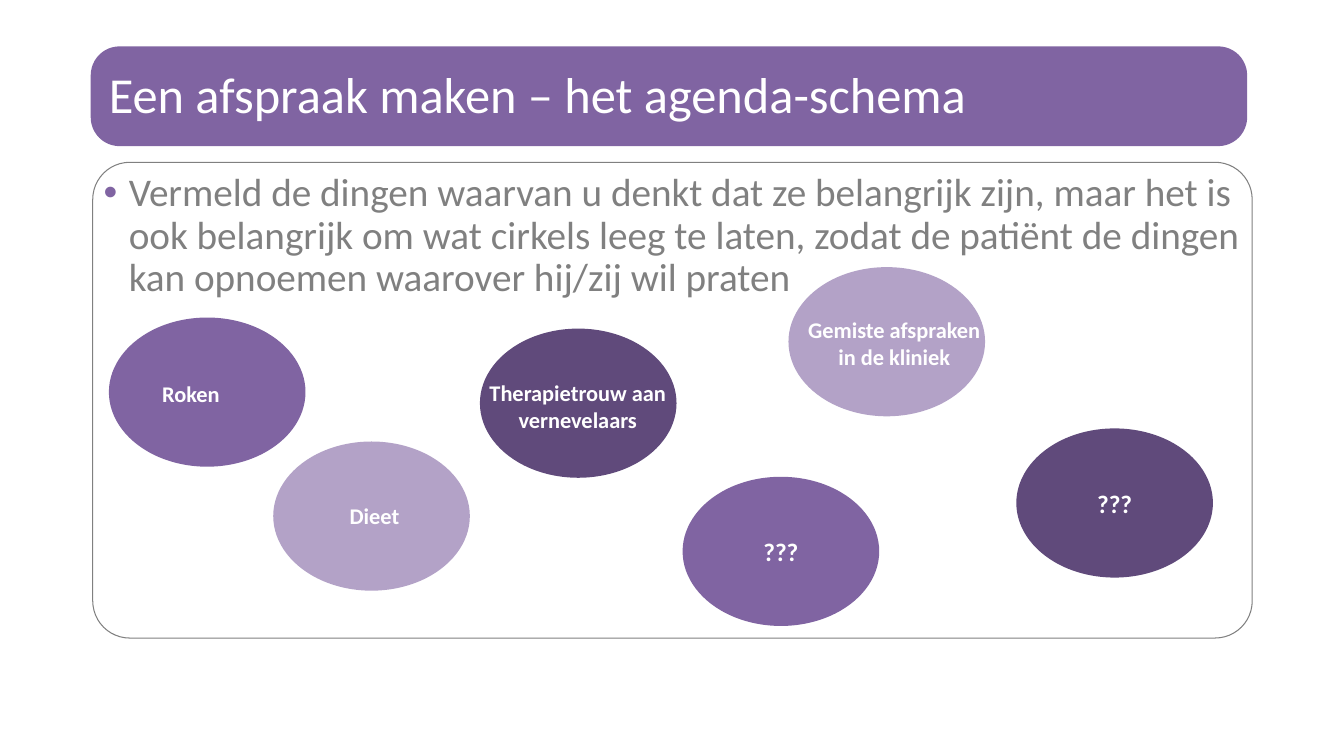
"""Build the agenda-setting slide with a title bar, a bullet panel and topic circles."""
from dataclasses import dataclass

from lxml import etree
from pptx import Presentation
from pptx.dml.color import RGBColor
from pptx.enum.shapes import MSO_SHAPE
from pptx.enum.text import MSO_ANCHOR, MSO_AUTO_SIZE, PP_ALIGN
from pptx.oxml.ns import qn
from pptx.util import Inches, Pt

ROUNDED = MSO_SHAPE.ROUNDED_RECTANGLE
OVAL = MSO_SHAPE.OVAL
TOP, MIDDLE = MSO_ANCHOR.TOP, MSO_ANCHOR.MIDDLE
LEFT, CENTER = PP_ALIGN.LEFT, PP_ALIGN.CENTER
GROW = MSO_AUTO_SIZE.SHAPE_TO_FIT_TEXT

FONT = "Calibri"
COLORS = {
    "purple": "8064A2",
    "lilac": "B3A2C7",
    "plum": "604A7B",
    "gray": "808080",
    "white": "FFFFFF",
}
CIRCLE_WIDTH, CIRCLE_HEIGHT = 1.95, 1.48
TITLE = "Een afspraak maken – het agenda-schema"
ADVICE = (
    "Vermeld de dingen waarvan u denkt dat ze belangrijk zijn, maar het is ook "
    "belangrijk om wat cirkels leeg te laten, zodat de patiënt de dingen kan "
    "opnoemen waarover hij/zij wil praten"
)


@dataclass(frozen=True)
class Box:
    left: float
    top: float
    width: float
    height: float

    def lengths(self) -> tuple:
        return tuple(Inches(v) for v in (self.left, self.top, self.width, self.height))


@dataclass(frozen=True)
class Topic:
    text: str
    color: str
    left: float
    top: float
    label: Box
    size: int = 16
    align: PP_ALIGN = CENTER
    anchor: MSO_ANCHOR = TOP
    wrap: bool = False


TOPICS = [
    Topic("Dieet", "lilac", 2.71, 4.38, Box(3.37, 4.93, 0.7, 0.37), align=LEFT),
    Topic("Roken", "purple", 1.08, 3.15, Box(1.51, 3.72, 0.78, 0.37), align=LEFT),
    Topic("Therapietrouw aan\nvernevelaars", "plum", 4.76, 3.26,
          Box(4.72, 3.71, 2.02, 0.64)),
    Topic("Gemiste afspraken\nin de kliniek", "lilac", 7.82, 2.65,
          Box(7.75, 3.09, 2.24, 0.64), wrap=True),
    Topic("???", "purple", 6.77, 4.73, Box(7.47, 5.27, 0.55, 0.4), 18, anchor=MIDDLE),
    Topic("???", "plum", 10.08, 4.25, Box(10.78, 4.79, 0.55, 0.4), 18, anchor=MIDDLE),
]


def rgb(name: str) -> RGBColor:
    return RGBColor.from_string(COLORS[name])


def add_solid(shapes, kind: MSO_SHAPE, box: Box, color: str):
    shape = shapes.add_shape(kind, *box.lengths())
    shape.shadow.inherit = False
    shape.fill.solid()
    shape.fill.fore_color.rgb = rgb(color)
    shape.line.fill.background()
    return shape


def write_text(text_frame, text: str, size: int, color: str, bold: bool = False,
               align: PP_ALIGN = LEFT, spacing: float = 1.0) -> None:
    text_frame.text = text
    for paragraph in text_frame.paragraphs:
        paragraph.alignment = align
        paragraph.line_spacing = spacing
        for run in paragraph.runs:
            run.font.name = FONT
            run.font.size = Pt(size)
            run.font.bold = bold
            run.font.color.rgb = rgb(color)


def clear_margins(text_frame) -> None:
    text_frame.margin_left = text_frame.margin_right = 0
    text_frame.margin_top = text_frame.margin_bottom = 0
    text_frame.word_wrap = True


def add_bullet(paragraph, color: str) -> None:
    properties = paragraph._p.get_or_add_pPr()
    properties.set("marL", str(Inches(0.25)))
    properties.set("indent", str(-Inches(0.25)))
    bullet_color = etree.SubElement(properties, qn("a:buClr"))
    etree.SubElement(bullet_color, qn("a:srgbClr"), val=COLORS[color])
    etree.SubElement(properties, qn("a:buFont"), typeface="Arial")
    etree.SubElement(properties, qn("a:buChar"), char="•")


def add_title(slide) -> None:
    bar = add_solid(slide.shapes, ROUNDED, Box(0.9, 0.46, 11.47, 0.99), "purple")
    bar.adjustments[0] = 0.29
    title = slide.shapes.add_textbox(*Box(1.08, 0.62, 11.18, 0.72).lengths())
    clear_margins(title.text_frame)
    title.text_frame.vertical_anchor = MIDDLE
    write_text(title.text_frame, TITLE, 36, "white", spacing=0.8)


def add_advice(slide) -> None:
    panel = slide.shapes.add_shape(ROUNDED, *Box(0.92, 1.61, 11.5, 4.72).lengths())
    panel.adjustments[0] = 0.078
    panel.shadow.inherit = False
    panel.fill.background()
    panel.line.color.rgb = rgb("gray")
    panel.line.width = Pt(0.75)
    clear_margins(panel.text_frame)
    panel.text_frame.vertical_anchor = TOP
    write_text(panel.text_frame, ADVICE, 28, "gray", spacing=0.9)
    add_bullet(panel.text_frame.paragraphs[0], "purple")


def add_topic(slide, topic: Topic) -> None:
    group = slide.shapes.add_group_shape()
    circle = Box(topic.left, topic.top, CIRCLE_WIDTH, CIRCLE_HEIGHT)
    add_solid(group.shapes, OVAL, circle, topic.color)
    label = group.shapes.add_textbox(*topic.label.lengths())
    label.text_frame.word_wrap = topic.wrap
    label.text_frame.auto_size = GROW
    label.text_frame.vertical_anchor = topic.anchor
    write_text(label.text_frame, topic.text, topic.size, "white", True, topic.align)


def main() -> None:
    presentation = Presentation()
    presentation.slide_width = Inches(13.33)
    presentation.slide_height = Inches(7.5)
    slide = presentation.slides.add_slide(presentation.slide_layouts[6])
    add_title(slide)
    add_advice(slide)
    for topic in TOPICS:
        add_topic(slide, topic)
    presentation.save("out.pptx")


if __name__ == "__main__":
    main()
